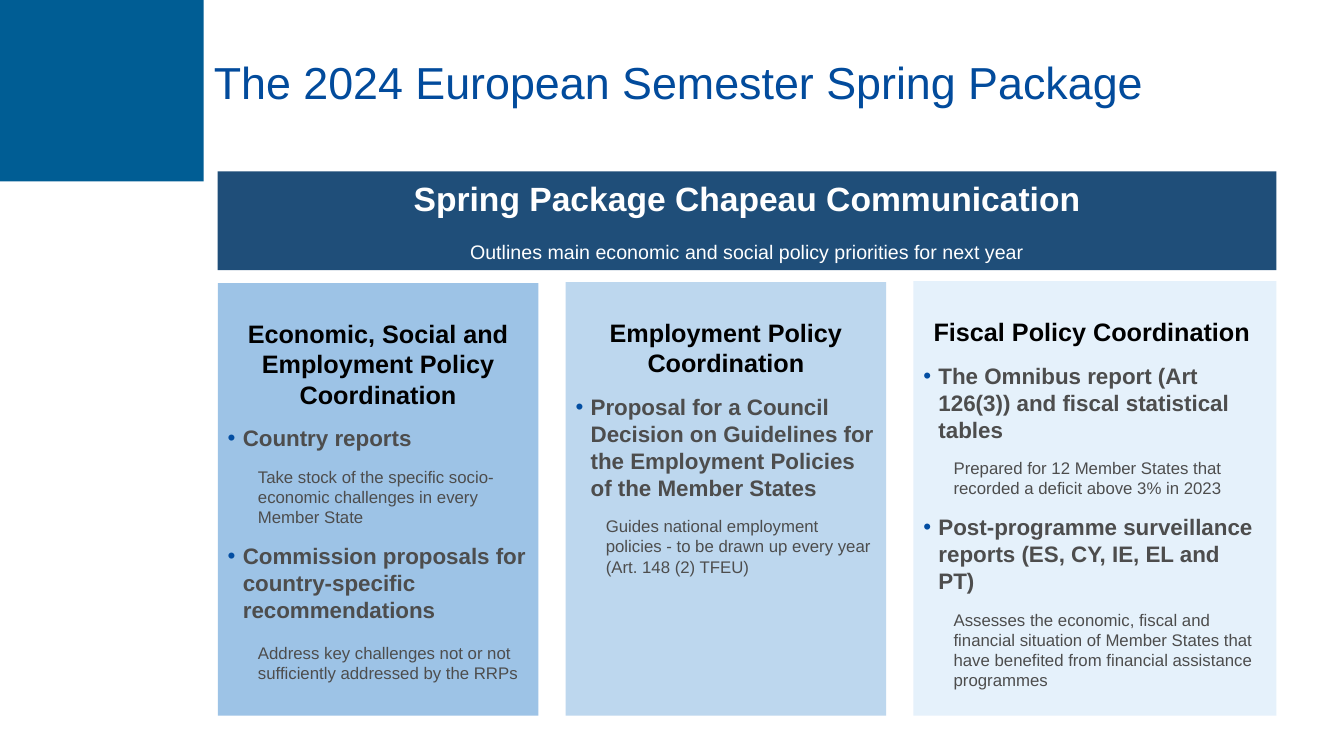
from dataclasses import dataclass

from lxml import etree
from pptx import Presentation
from pptx.dml.color import RGBColor
from pptx.enum.shapes import MSO_SHAPE
from pptx.enum.text import MSO_ANCHOR, PP_ALIGN
from pptx.oxml.ns import qn
from pptx.util import Inches, Pt

LEFT, CENTER = PP_ALIGN.LEFT, PP_ALIGN.CENTER
TOP, MIDDLE = MSO_ANCHOR.TOP, MSO_ANCHOR.MIDDLE
RECTANGLE = MSO_SHAPE.RECTANGLE


@dataclass(frozen=True)
class Theme:
    font: str = "Arial"
    white: str = "FFFFFF"
    black: str = "000000"
    grey: str = "4D4D4D"
    title_blue: str = "024B9C"
    bullet_blue: str = "034EA2"
    corner_blue: str = "005D94"
    banner: str = "1F4E79"
    pillars: tuple = ("9DC3E6", "BDD7EE", "E5F1FB")
    title_size: float = 32
    banner_size: float = 24
    heading_size: float = 18
    item_size: float = 16
    subtitle_size: float = 14
    detail_size: float = 12


THEME = Theme()


def add_block(left, top, width, height, color):
    """Add a plain filled rectangle, measured in inches."""
    block = slide.shapes.add_shape(RECTANGLE, Inches(left), Inches(top),
                                   Inches(width), Inches(height))
    block.shadow.inherit = False
    block.fill.solid()
    block.fill.fore_color.rgb = RGBColor.from_string(color)
    block.line.fill.background()
    return block


def write(frame, text, *, size, color, bold=False, align=LEFT, spacing=1.0,
          before=0, after=0, level=0, indent=0, bullet=False):
    """Fill the frame's empty first paragraph, or append a new one."""
    frame.word_wrap = True
    paragraph = frame.paragraphs[0]
    if paragraph.runs:
        paragraph = frame.add_paragraph()
    paragraph.alignment = align
    paragraph.level = level
    paragraph.line_spacing = spacing
    paragraph.space_before, paragraph.space_after = Pt(before), Pt(after)
    properties = paragraph._p.get_or_add_pPr()
    properties.set("marL", str(Inches(indent)))
    properties.set("indent", str(Inches(-indent if bullet else 0)))
    if bullet:
        bullet_color = etree.SubElement(properties, qn("a:buClr"))
        etree.SubElement(bullet_color, qn("a:srgbClr"), val=THEME.bullet_blue)
        etree.SubElement(properties, qn("a:buFont"), typeface=THEME.font)
        etree.SubElement(properties, qn("a:buChar"), char="•")
    else:
        etree.SubElement(properties, qn("a:buNone"))
    run = paragraph.add_run()
    run.text = text
    run.font.name, run.font.size, run.font.bold = THEME.font, Pt(size), bold
    run.font.color.rgb = RGBColor.from_string(color)


presentation = Presentation()
presentation.slide_width, presentation.slide_height = Inches(13.33), Inches(7.5)
slide = presentation.slides.add_slide(presentation.slide_layouts[5])

add_block(0, 0, 2.02, 1.8, THEME.corner_blue)

title = slide.shapes.title
title.left, title.top = Inches(2.02), Inches(0.4)
title.width, title.height = Inches(10.63), Inches(0.89)
title.text_frame.vertical_anchor = MIDDLE
write(title.text_frame, "The 2024 European Semester Spring Package",
      size=THEME.title_size, color=THEME.title_blue, spacing=0.9)

banner = add_block(2.16, 1.7, 10.5, 0.98, THEME.banner)
banner.text_frame.vertical_anchor = MIDDLE
write(banner.text_frame, "Spring Package Chapeau Communication",
      size=THEME.banner_size, color=THEME.white, bold=True, align=CENTER)
write(banner.text_frame, "Outlines main economic and social policy priorities for next year",
      size=THEME.subtitle_size, color=THEME.white, align=CENTER, before=16)

# Pillars: top, width, right margin, heading, then bulleted items with their details
PILLAR_LEFT, PILLAR_PITCH, PILLAR_BOTTOM = 2.16, 3.45, 7.1
PARAGRAPH_GAP = 10.9
pillars = [
    (2.81, 3.18, 0.1, "Economic, Social and Employment Policy Coordination", [
        ("Country reports",
         "Take stock of the specific socio-economic challenges in every Member State", 0),
        ("Commission proposals for country-specific recommendations",
         "Address key challenges not or not sufficiently addressed by the RRPs", 3),
    ]),
    (2.8, 3.18, 0.1, "Employment Policy Coordination", [
        ("Proposal for a Council Decision on Guidelines for the Employment Policies "
         "of the Member States",
         "Guides national employment policies - to be drawn up every year "
         "(Art. 148 (2) TFEU)", 0),
    ]),
    (2.79, 3.6, 0.16, "Fiscal Policy Coordination", [
        ("The Omnibus report (Art 126(3)) and fiscal statistical tables",
         "Prepared for 12 Member States that recorded a deficit above 3% in 2023", 0),
        ("Post-programme surveillance reports (ES, CY, IE, EL and PT)",
         "Assesses the economic, fiscal and financial situation of Member States that "
         "have benefited from financial assistance programmes", 0),
    ]),
]
for i, (top, width, right_margin, heading, items) in enumerate(pillars):
    pillar = add_block(PILLAR_LEFT + i * PILLAR_PITCH, top, width,
                       PILLAR_BOTTOM - top, THEME.pillars[i])
    frame = pillar.text_frame
    frame.vertical_anchor = TOP
    frame.margin_top, frame.margin_right = Inches(0.35), Inches(right_margin)
    write(frame, heading, size=THEME.heading_size, color=THEME.black, bold=True,
          align=CENTER, after=PARAGRAPH_GAP)
    for item, detail, detail_before in items:
        write(frame, item, size=THEME.item_size, color=THEME.grey, bold=True,
              after=PARAGRAPH_GAP, indent=0.15, bullet=True)
        write(frame, detail, size=THEME.detail_size, color=THEME.grey, level=1,
              before=detail_before, after=PARAGRAPH_GAP, indent=0.3)

presentation.save("out.pptx")
